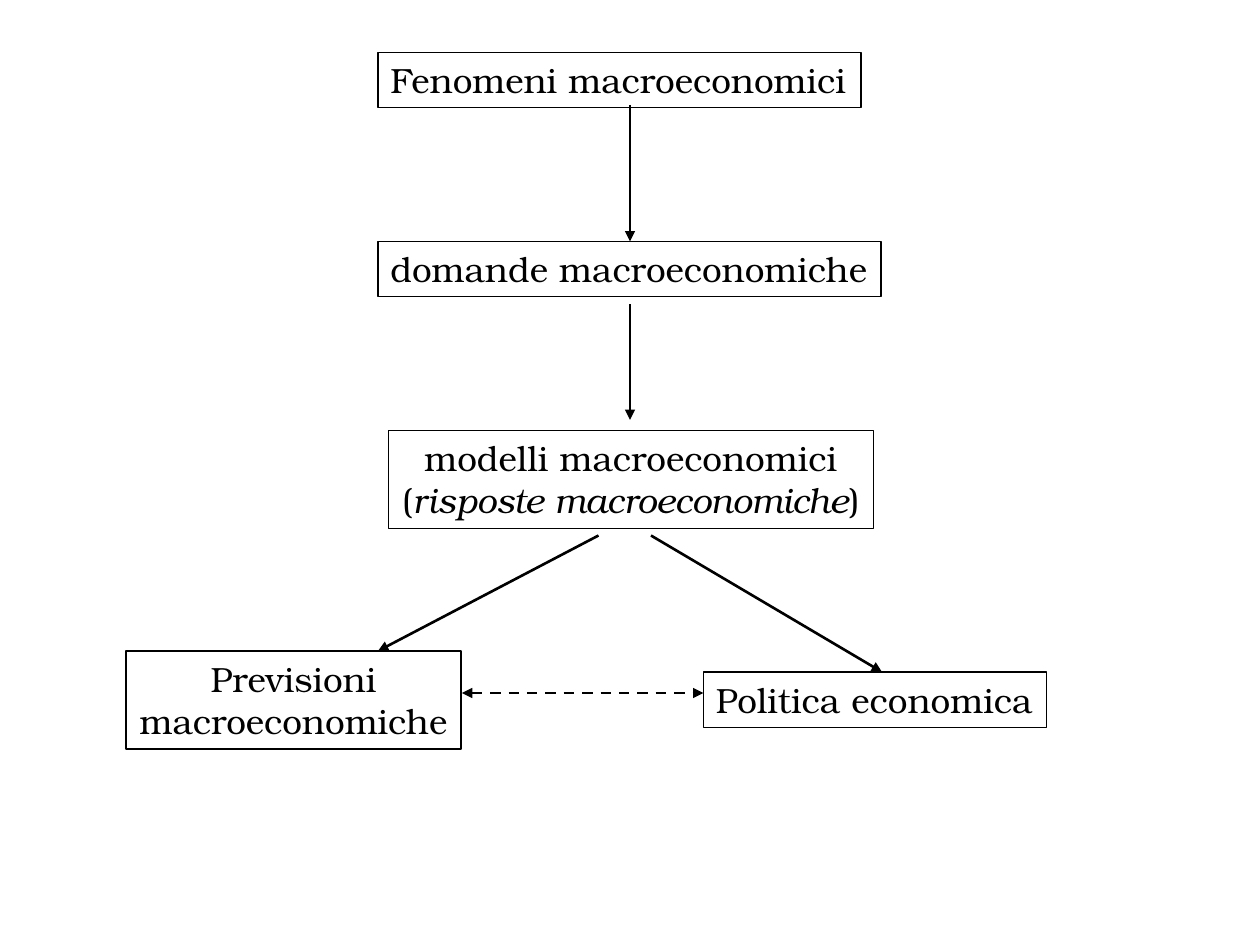
import dataclasses

import lxml.etree
import pptx
import pptx.dml.color
import pptx.enum.dml
import pptx.enum.shapes
import pptx.enum.text
import pptx.oxml.ns
import pptx.util

Pt = pptx.util.Pt
ALIGN = pptx.enum.text.PP_ALIGN


@dataclasses.dataclass(frozen=True)
class Theme:
    ink: pptx.dml.color.RGBColor = pptx.dml.color.RGBColor(0, 0, 0)
    font: str = "TeX Gyre Bonum"
    text_size: float = 20
    border: float = 0.75
    arrow: float = 1.5


def add_text(paragraph, text, *, theme, italic=False):
    run = paragraph.add_run()
    run.text = text
    run.font.name = theme.font
    run.font.size = Pt(theme.text_size)
    run.font.color.rgb = theme.ink
    run.font.italic = italic


class Diagram:
    def __init__(self, slide, theme):
        self.slide = slide
        self.theme = theme

    def box(self, left, top, width, height, lines, align=ALIGN.LEFT):
        concept = self.slide.shapes.add_textbox(Pt(left), Pt(top), Pt(width), Pt(height))
        concept.line.color.rgb = self.theme.ink
        concept.line.width = Pt(self.theme.border)
        frame = concept.text_frame
        frame.word_wrap = False
        frame.auto_size = pptx.enum.text.MSO_AUTO_SIZE.SHAPE_TO_FIT_TEXT
        for index, pieces in enumerate(lines):
            paragraph = frame.add_paragraph() if index else frame.paragraphs[0]
            paragraph.alignment = align
            for text, italic in pieces:
                add_text(paragraph, text, theme=self.theme, italic=italic)

    def arrow(self, start, end, mutual=False):
        link = self.slide.shapes.add_connector(
            pptx.enum.shapes.MSO_CONNECTOR.STRAIGHT, *map(Pt, start + end))
        link.line.color.rgb = self.theme.ink
        link.line.width = Pt(self.theme.arrow)
        if mutual:
            link.line.dash_style = pptx.enum.dml.MSO_LINE.DASH
        qn = pptx.oxml.ns.qn
        outline = link.element.spPr.find(qn("a:ln"))
        for tag in ("a:headEnd", "a:tailEnd") if mutual else ("a:tailEnd",):
            lxml.etree.SubElement(outline, qn(tag), type="triangle")
        lxml.etree.SubElement(link.element.spPr, qn("a:effectLst"))


def main():
    deck = pptx.Presentation()
    deck.slide_width, deck.slide_height = Pt(720), Pt(540)
    diagram = Diagram(deck.slides.add_slide(deck.slide_layouts[6]), Theme())

    one_line, two_lines = 31.7, 56
    diagram.box(216, 30, 276, one_line, [[("Fenomeni macroeconomici", False)]])
    diagram.box(216, 138, 287.5, one_line, [[("domande macroeconomiche", False)]])
    diagram.box(222, 246, 277, two_lines, [
        [("modelli macroeconomici", False)],
        [("(", False), ("risposte macroeconomiche", True), (")", False)],
    ], ALIGN.CENTER)
    diagram.box(72, 372, 191.5, two_lines, [
        [("Previsioni", False)],
        [("macroeconomiche", False)],
    ], ALIGN.CENTER)
    diagram.box(402, 384, 196, one_line, [[("Politica economica", False)]])

    diagram.arrow((360, 60), (360, 138))
    diagram.arrow((360, 174), (360, 240))
    diagram.arrow((342, 306), (216, 372))
    diagram.arrow((372, 306), (504, 384))
    diagram.arrow((264, 396), (402, 396), mutual=True)

    deck.save("out.pptx")


if __name__ == "__main__":
    main()
